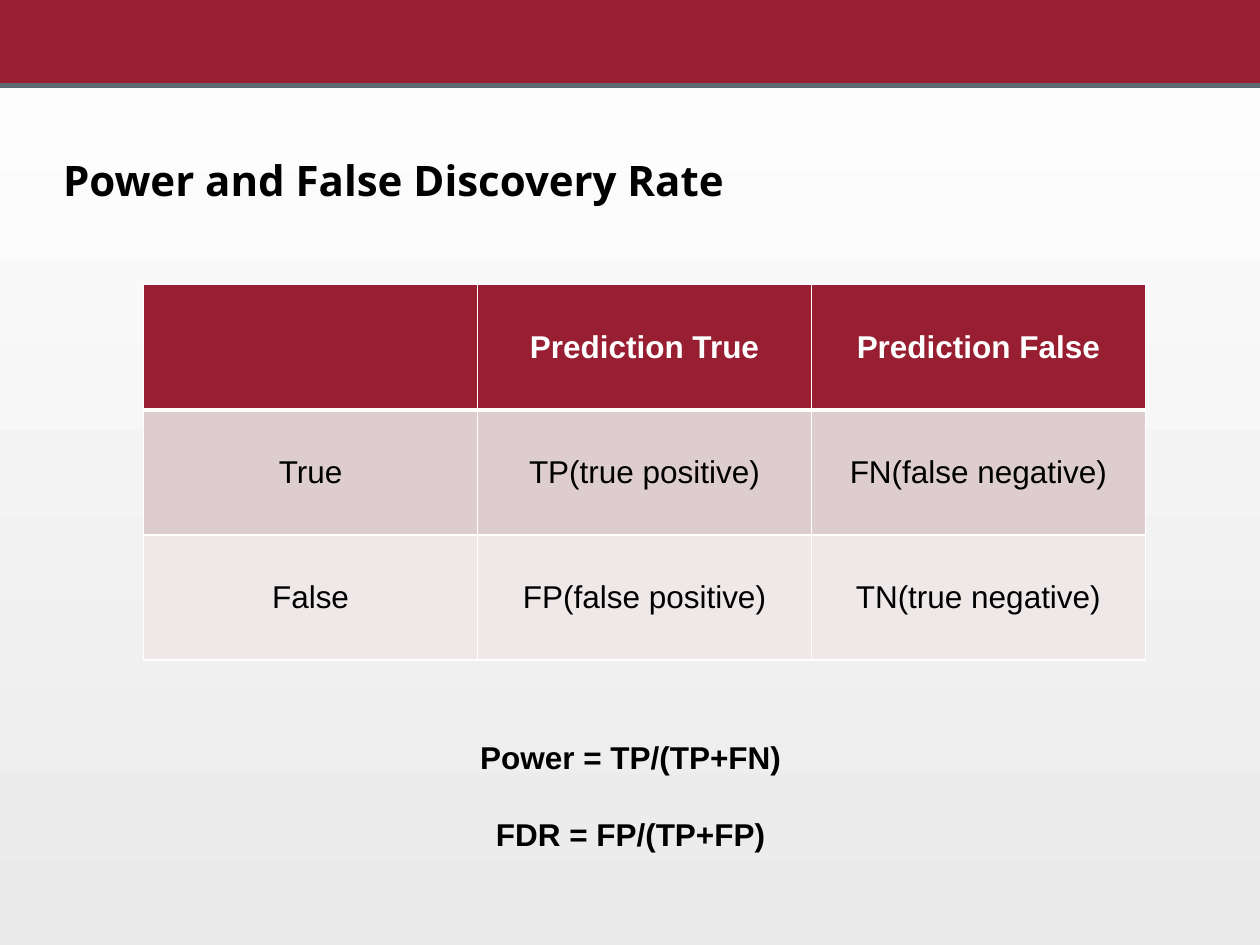
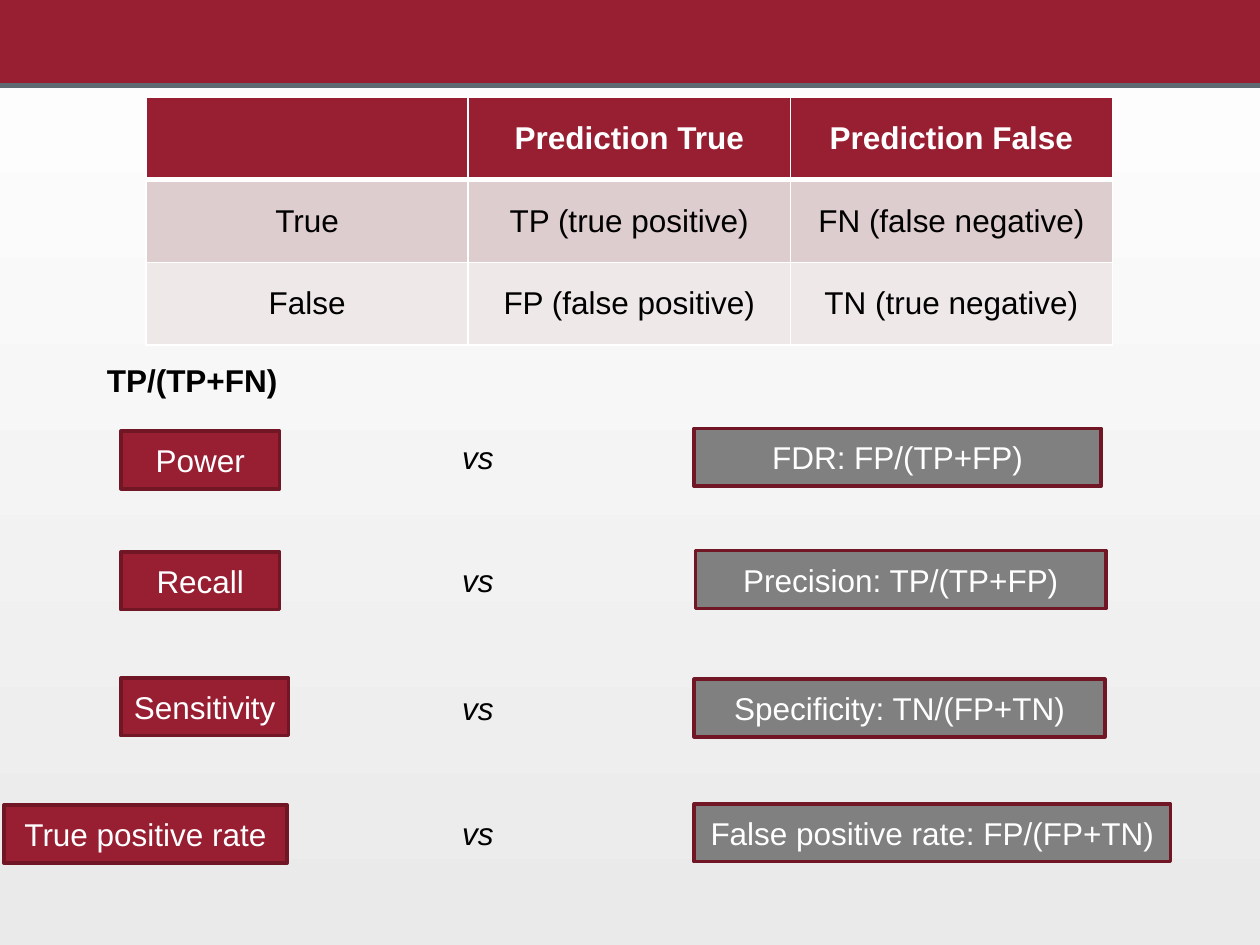
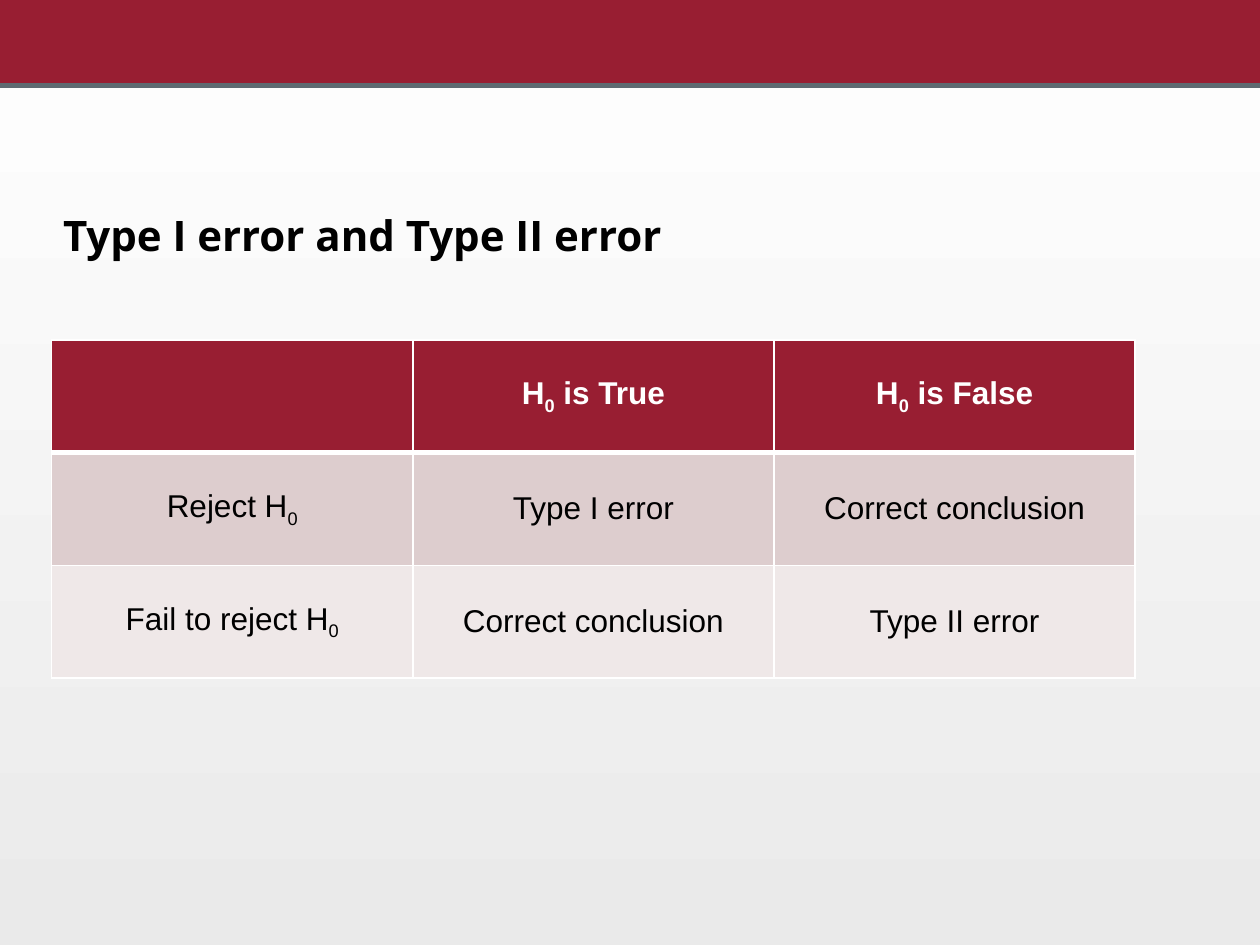
from lxml import etree
from pptx import Presentation, util as u
from pptx.dml.color import RGBColor
from pptx.enum import shapes, text
from pptx.oxml.ns import qn

SCALE = 9144
WIDE, HIGH = 1000, 750
RED, EDGE, SLATE, GRAY = "981E32", "701625", "5E6A71", "808080"
WHITE, BLACK, MIST = "FFFFFF", "000000", "EAEAEA"
FILLS = [RED, "DDCDCE", "EFE8E8"]
LEFT, CENTER = text.PP_ALIGN.LEFT, text.PP_ALIGN.CENTER
MIDDLE, BOTTOM = text.MSO_ANCHOR.MIDDLE, text.MSO_ANCHOR.BOTTOM
GROW = text.MSO_AUTO_SIZE.SHAPE_TO_FIT_TEXT


def px(*vals):
    return [u.Emu(val * SCALE) for val in vals]


def rgb(code):
    return RGBColor.from_string(code)


def paint(fill, code):
    fill.solid()
    fill.fore_color.rgb = rgb(code)


class Deck:
    def __init__(self):
        self.prs = Presentation()
        self.prs.slide_width, self.prs.slide_height = px(WIDE, HIGH)
        fill = self.prs.slide_master.background.fill
        fill.gradient()
        fill.gradient_angle = 90
        for stop, code in zip(fill.gradient_stops, (MIST, WHITE)):
            stop.color.rgb = rgb(code)

    def add(self, title=None, top=0):
        layout = self.prs.slide_layouts[5 if title else 6]
        self.slide = self.prs.slides.add_slide(layout)
        self.box(0, 0, WIDE, 67, RED)
        self.rule(-2, 68, WIDE, 68, SLATE, 3)
        if title:
            self.title(title, top)

    def style(self, para, words, color=BLACK, size=18, face="Arial",
              bold=False, slant=False, align=CENTER):
        para.alignment = align
        font = para.font
        font.name, font.size = face, u.Pt(size)
        font.bold, font.italic = bold, slant
        font.color.rgb = rgb(color)
        for i, part in enumerate(words.split("_")):
            if i:
                sub = para.add_run()
                sub.text = part[0]
                sub.font._element.set("baseline", "-25000")
                part = part[1:]
            if part:
                para.add_run().text = part

    def title(self, words, top):
        shape = self.slide.shapes.title
        shape.left, shape.top, shape.width, shape.height = px(0, top, WIDE, 46)
        frame = shape.text_frame
        frame.margin_left = frame.margin_right = px(50)[0]
        frame.vertical_anchor, frame.auto_size = BOTTOM, GROW
        para = frame.paragraphs[0]
        para.line_spacing = 0.9
        self.style(para, words, size=24, face="Open Sans", bold=True, align=LEFT)

    def box(self, left, top, width, height, fill, words=None):
        shape = self.slide.shapes.add_shape(
            shapes.MSO_SHAPE.RECTANGLE, *px(left, top, width, height))
        shape.shadow.inherit = False
        paint(shape.fill, fill)
        if words is None:
            shape.line.fill.background()
            return
        paint(shape.line.fill, EDGE)
        shape.line.width = u.Pt(2)
        frame = shape.text_frame
        frame.word_wrap, frame.vertical_anchor = False, MIDDLE
        self.style(frame.paragraphs[0], words, WHITE)

    def rule(self, left, top, right, low, color, width):
        line = self.slide.shapes.add_connector(
            shapes.MSO_CONNECTOR.STRAIGHT, *px(left, top, right, low))
        paint(line.line.fill, color)
        line.line.width = u.Pt(width)
        etree.SubElement(line._element.spPr, qn("a:effectLst"))

    def label(self, left, top, width, height, lines, wrap=True, gap=0, **look):
        frame = self.slide.shapes.add_textbox(
            *px(left, top, width, height)).text_frame
        frame.word_wrap, frame.auto_size = wrap, GROW
        for i, words in enumerate(lines):
            para = frame.add_paragraph() if i else frame.paragraphs[0]
            if i:
                para.space_before = u.Pt(gap)
            self.style(para, words, **look)

    def edge(self, cell, row):
        props = cell._tc.get_or_add_tcPr()
        thick = {"T": row == 1, "B": row == 0}
        for side in "LRTB":
            width = u.Pt(3 if thick.get(side) else 1)
            line = etree.SubElement(props, qn("a:ln" + side), w=str(width))
            fill = etree.SubElement(line, qn("a:solidFill"))
            etree.SubElement(fill, qn("a:srgbClr"), val=WHITE)

    def table(self, left, top, width, height, rows):
        grid = self.slide.shapes.add_table(
            len(rows), len(rows[0]), *px(left, top, width, height)).table
        for r, row in enumerate(rows):
            for c, words in enumerate(row):
                cell = grid.cell(r, c)
                self.edge(cell, r)
                paint(cell.fill, FILLS[r])
                cell.vertical_anchor = MIDDLE
                self.style(cell.text_frame.paragraphs[0], words,
                           BLACK if r else WHITE, bold=r == 0)


def truth(gap):
    return [
        ["", "Prediction True", "Prediction False"],
        ["True", f"TP{gap}(true positive)", f"FN{gap}(false negative)"],
        ["False", f"FP{gap}(false positive)", f"TN{gap}(true negative)"],
    ]


def main():
    deck = Deck()

    deck.add("Power and False Discovery Rate", 122)
    deck.table(114, 226, 795, 298, truth(""))
    deck.label(140, 581, 721, 101, ["Power = TP/(TP+FN)", "FDR = FP/(TP+FP)"],
               gap=22.5, bold=True)

    deck.add()
    deck.table(116, 77, 767, 197, truth(" "))
    deck.label(75, 282, 157, 40, ["TP/(TP+FN)"], wrap=False, bold=True, align=LEFT)
    pairs = [
        (342, "Power", 96, 126, 340, "FDR: FP/(TP+FP)", 551, 323),
        (438, "Recall", 96, 126, 437, "Precision: TP/(TP+FP)", 552, 326),
        (538, "Sensitivity", 96, 133, 539, "Specificity: TN/(FP+TN)", 551, 326),
        (639, "True positive rate", 3, 225, 638,
         "False positive rate: FP/(FP+TN)", 551, 378),
    ]
    for top, name, left, width, high, rival, start, span in pairs:
        deck.box(left, top, width, 46, RED, name)
        deck.box(start, high, span, 46, GRAY, rival)
        deck.label(357, high + 3, 58, 40, ["vs"], slant=True, align=LEFT)

    deck.add("Type I error and Type II error", 166)
    deck.table(41, 270, 860, 268, [
        ["", "H_0 is True", "H_0 is False"],
        ["Reject H_0", "Type I error", "Correct conclusion"],
        ["Fail to reject H_0", "Correct conclusion", "Type II error"],
    ])

    deck.prs.save("out.pptx")


if __name__ == "__main__":
    main()
